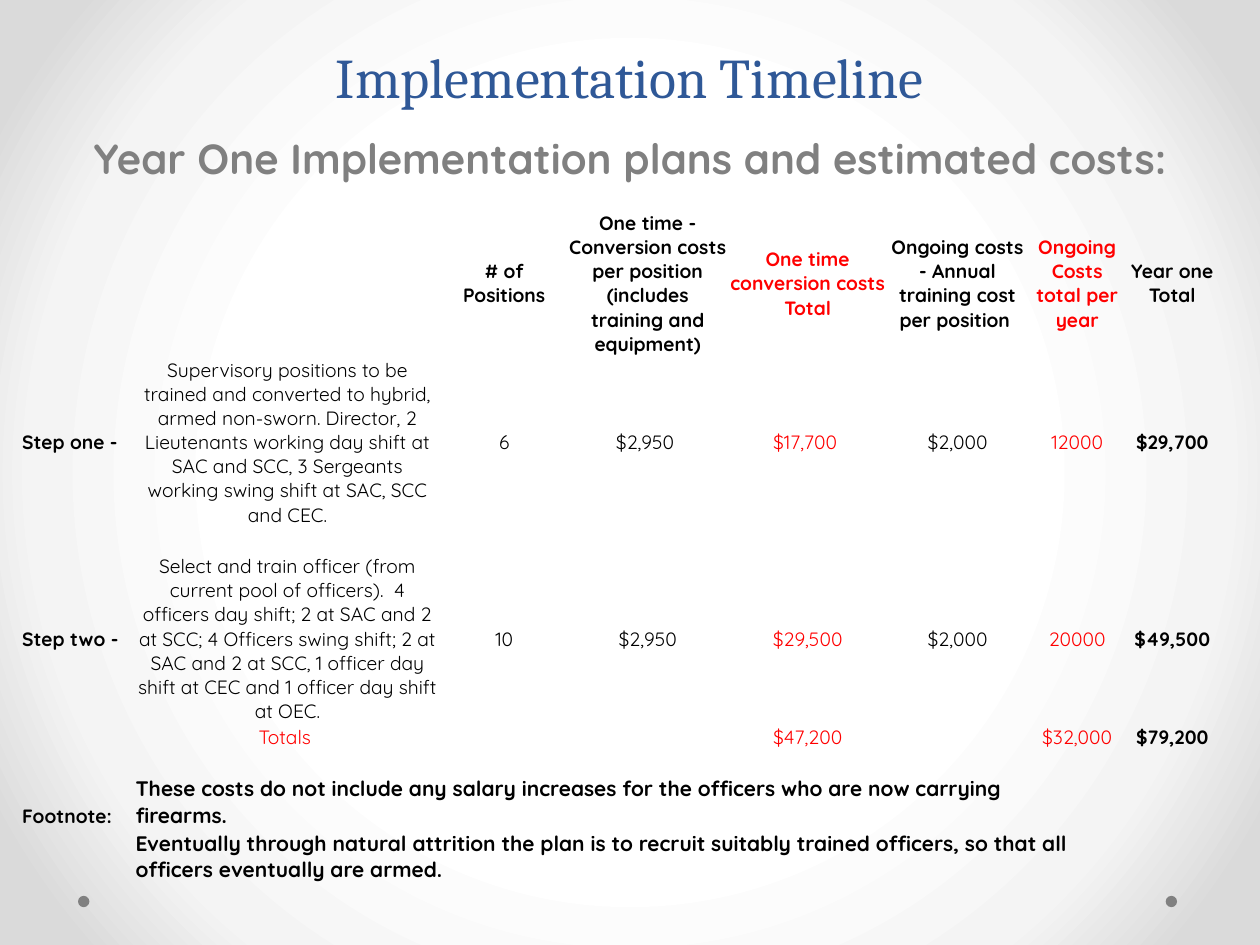
from dataclasses import dataclass

from pptx import Presentation
from pptx.dml.color import RGBColor
from pptx.enum.shapes import MSO_SHAPE
from pptx.enum.text import MSO_ANCHOR, PP_ALIGN
from pptx.oxml import parse_xml
from pptx.oxml.ns import nsdecls, qn
from pptx.util import Pt


@dataclass(frozen=True)
class Theme:
    title: RGBColor = RGBColor(0x2F, 0x58, 0x97)
    gray: RGBColor = RGBColor(0x80, 0x80, 0x80)
    black: RGBColor = RGBColor(0, 0, 0)
    red: RGBColor = RGBColor(0xFF, 0, 0)
    backdrop: tuple = ((50, "FFFFFF"), (76, "F4F4F4"), (92, "DADADA"))
    title_font: str = "Cambria"
    body_font: str = "Quicksand"
    title_size: int = 32
    subtitle_size: int = 24
    cell_size: int = 11
    note_size: int = 12


THEME = Theme()
NO_STYLE = "{2D5ABB26-0587-4C30-8999-92F81FD0307C}"
COL_WIDTHS = (64.8, 175, 72.7, 91.4, 91.4, 79.9, 56.9, 51.8)
ROW_HEIGHTS = (83.5, 97.9, 14.4, 97.9, 14.4, 14.4, 31, 31)
RED_COLS = (4, 6)
TOTAL_COL = 7

COSTS = {
    0: ("", "", "# of Positions",
        "One time - Conversion costs per position (includes training and equipment)",
        "One time conversion costs Total",
        "Ongoing costs - Annual training cost per position ",
        "Ongoing Costs total per year", "Year one Total"),
    1: ("Step one -",
        "Supervisory positions to be trained and converted to hybrid, armed "
        "non-sworn. Director, 2 Lieutenants working day shift at SAC and SCC, "
        "3 Sergeants working swing shift at SAC, SCC and CEC.",
        "6", "$2,950 ", "$17,700 ", "$2,000", "12000", "$29,700"),
    3: ("Step two -",
        "Select and train officer (from current pool of officers).  4 officers "
        "day shift; 2 at SAC and 2 at SCC; 4 Officers swing shift; 2 at SAC and "
        "2 at SCC, 1 officer day shift at CEC and 1 officer day shift at OEC.",
        "10", "$2,950", "$29,500", "$2,000", "20000", "$49,500"),
    4: ("", "Totals ", "", "", "$47,200", "", "$32,000", "$79,200"),
}
TOTALS_ROW = 4
NOTES_ROW = 6
# Each footnote with the last column it spans
NOTES = (
    ("These costs do not include any salary increases for the officers who are "
     "now carrying firearms.", 5),
    ("Eventually through natural attrition the plan is to recruit suitably "
     "trained officers, so that all officers eventually are armed.", 6),
)


def add_run(p, text, font, size, color, bold=False):
    r = p.add_run()
    r.text = text
    r.font.name = font
    r.font.size = Pt(size)
    r.font.bold = bold
    r.font.color.rgb = color


def set_background(slide):
    """Radial gradient, light at the centre."""
    stops = "".join(
        f'<a:gs pos="{pos * 1000}"><a:srgbClr val="{color}"/></a:gs>'
        for pos, color in THEME.backdrop)
    bg = parse_xml(
        f'<p:bg {nsdecls("p", "a")}><p:bgPr><a:gradFill rotWithShape="1">'
        f'<a:gsLst>{stops}</a:gsLst><a:path path="circle">'
        '<a:fillToRect l="50000" t="50000" r="50000" b="50000"/></a:path>'
        '</a:gradFill><a:effectLst/></p:bgPr></p:bg>')
    slide.element.cSld.insert(0, bg)


def add_dots(slide, left, top, width, size):
    """A dot at each end of the given strip."""
    for x in (left, left + width - size):
        dot = slide.shapes.add_shape(
            MSO_SHAPE.OVAL, Pt(x), Pt(top), Pt(size), Pt(size))
        dot.shadow.inherit = False
        dot.fill.solid()
        dot.fill.fore_color.rgb = THEME.gray
        dot.line.fill.background()


def add_heading(slide, box, text, font, size, color, bold=False,
                anchor=MSO_ANCHOR.TOP, line_spacing=None):
    tf = slide.shapes.add_textbox(*map(Pt, box)).text_frame
    tf.word_wrap = True
    tf.vertical_anchor = anchor
    p = tf.paragraphs[0]
    p.alignment = PP_ALIGN.CENTER
    if line_spacing:
        p.line_spacing = Pt(line_spacing)
    add_run(p, text, font, size, color, bold)


def clear_cell(cell):
    """Unfilled cell with thin margins whose empty line fits a short row."""
    cell.fill.background()
    cell.margin_left = cell.margin_top = cell.margin_right = Pt(0.7)
    cell.margin_bottom = Pt(0)
    end = cell.text_frame.paragraphs[0]._p.get_or_add_endParaRPr()
    end.set("sz", str(THEME.cell_size * 100))


def fill_cell(cell, text, color=THEME.black, bold=True, size=THEME.cell_size,
              align=PP_ALIGN.LEFT, anchor=MSO_ANCHOR.BOTTOM):
    cell.vertical_anchor = anchor
    p = cell.text_frame.paragraphs[0]
    p.alignment = align
    add_run(p, text, THEME.body_font, size, color, bold)


def add_costs(table):
    for row, texts in COSTS.items():
        is_totals = row == TOTALS_ROW
        for col, text in enumerate(texts):
            if not text:
                continue
            is_red = col in RED_COLS or (is_totals and col == 1)
            fill_cell(
                table.cell(row, col), text,
                color=THEME.red if is_red else THEME.black,
                bold=row == 0 or col in (0, TOTAL_COL),
                align=PP_ALIGN.LEFT if col == 0 else PP_ALIGN.CENTER,
                anchor=MSO_ANCHOR.BOTTOM if is_totals else MSO_ANCHOR.MIDDLE)


def add_notes(table):
    fill_cell(table.cell(NOTES_ROW, 0), "Footnote:")
    for row, (text, last_col) in enumerate(NOTES, NOTES_ROW):
        cell = table.cell(row, 1)
        cell.merge(table.cell(row, last_col))
        fill_cell(cell, text, size=THEME.note_size)


def add_cost_table(slide, left, top):
    frame = slide.shapes.add_table(
        len(ROW_HEIGHTS), len(COL_WIDTHS), Pt(left), Pt(top),
        Pt(sum(COL_WIDTHS)), Pt(sum(ROW_HEIGHTS)))
    table = frame.table
    table.first_row = table.horz_banding = False
    table._tbl.tblPr.find(qn("a:tableStyleId")).text = NO_STYLE
    for column, width in zip(table.columns, COL_WIDTHS):
        column.width = Pt(width)
    for row, height in zip(table.rows, ROW_HEIGHTS):
        row.height = Pt(height)
    for cell in table.iter_cells():
        clear_cell(cell)
    add_costs(table)
    add_notes(table)


def main():
    prs = Presentation()
    prs.slide_width, prs.slide_height = Pt(720), Pt(540)
    slide = prs.slides.add_slide(prs.slide_layouts[6])
    set_background(slide)
    add_dots(slide, left=44.6, top=511.9, width=628, size=6.5)
    add_heading(slide, (36, 72, 648, 48),
                "Year One Implementation plans and estimated costs:",
                THEME.body_font, THEME.subtitle_size, THEME.gray, bold=True)
    add_heading(slide, (36, 12.2, 648, 54), "Implementation Timeline",
                THEME.title_font, THEME.title_size, THEME.title,
                anchor=MSO_ANCHOR.BOTTOM, line_spacing=58)
    add_cost_table(slide, left=12, top=120)
    prs.save("out.pptx")


if __name__ == "__main__":
    main()
